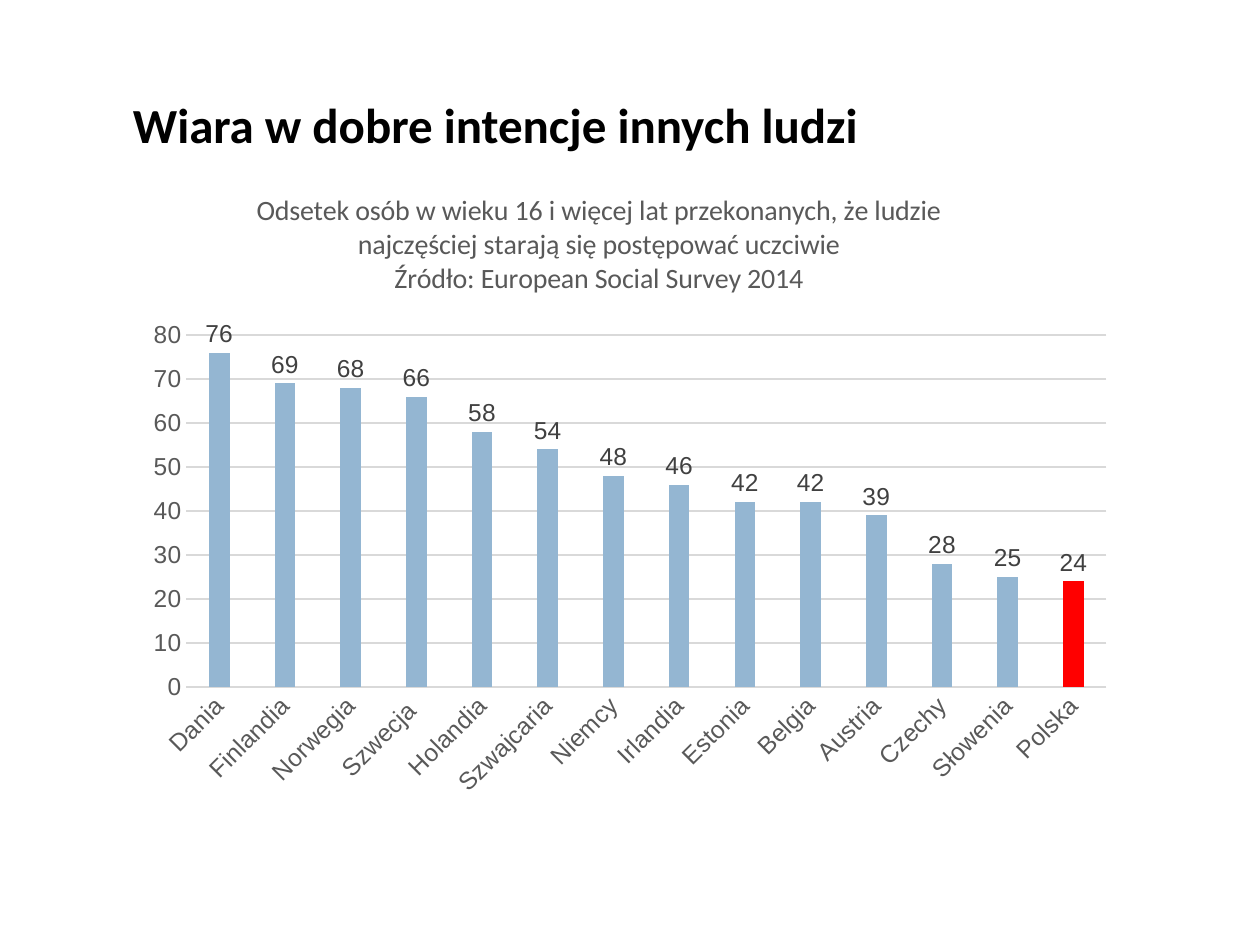
from pptx import Presentation
from pptx.chart.data import CategoryChartData
from pptx.dml.color import RGBColor
from pptx.enum.chart import XL_CHART_TYPE, XL_LABEL_POSITION, XL_TICK_MARK
from pptx.enum.text import MSO_ANCHOR, PP_ALIGN
from pptx.oxml.ns import qn
from pptx.util import Pt
from lxml import etree

COLUMN = XL_CHART_TYPE.COLUMN_CLUSTERED
OUTSIDE = XL_LABEL_POSITION.OUTSIDE_END
NO_TICK = XL_TICK_MARK.NONE
CENTER = PP_ALIGN.CENTER
MIDDLE = MSO_ANCHOR.MIDDLE

BLACK = RGBColor(0x00, 0x00, 0x00)
DARK = RGBColor(0x40, 0x40, 0x40)
GRAY = RGBColor(0x59, 0x59, 0x59)
PALE = RGBColor(0xD9, 0xD9, 0xD9)
BLUE = RGBColor(0x94, 0xB6, 0xD2)
RED = RGBColor(0xFF, 0x00, 0x00)

SHARES = {
    "Dania": 76, "Finlandia": 69, "Norwegia": 68, "Szwecja ": 66,
    "Holandia": 58, "Szwajcaria": 54, "Niemcy": 48, "Irlandia": 46,
    "Estonia": 42, "Belgia": 42, "Austria": 39, "Czechy": 28,
    "Słowenia": 25, "Polska": 24,
}
CAPTION = (
    "Odsetek osób w wieku 16 i więcej lat przekonanych, że ludzie "
    "najczęściej starają się postępować uczciwie\n"
    "Źródło: European Social Survey 2014"
)


class Deck:
    head_font = "Calibri"
    body_font = "Arial"

    def __init__(self, slide):
        self.slide = slide

    def style(self, font, name, size, color, bold=False):
        font.name, font.size, font.bold = name, Pt(size), bold
        font.color.rgb = color

    def place(self, parent, index, **spots):
        """Give a chart part a fixed place, in fractions of the chart."""
        for old in parent.findall(qn("c:layout")):
            parent.remove(old)
        layout = etree.Element(qn("c:layout"))
        manual = etree.SubElement(layout, qn("c:manualLayout"))
        for tag, value in spots.items():
            etree.SubElement(manual, qn("c:" + tag)).set("val", str(value))
        parent.insert(index, layout)

    def heading(self, text, left, top, width, height):
        box = self.slide.shapes.add_textbox(
            Pt(left), Pt(top), Pt(width), Pt(height))
        frame = box.text_frame
        frame.word_wrap = False
        frame.vertical_anchor = MIDDLE
        frame.text = text
        para = frame.paragraphs[0]
        para.alignment = CENTER
        self.style(para.runs[0].font, self.head_font, 28, BLACK, True)

    def caption(self, chart, text):
        chart.has_title = True
        title = chart.chart_title
        title.include_in_layout = False
        title.text_frame.text = text
        for para in title.text_frame.paragraphs:
            para.alignment = CENTER
            self.style(para.runs[0].font, self.head_font, 16, GRAY)
        self.place(title._element, 1, xMode="edge", yMode="edge",
                   x=0.12, y=0.02)

    def axis(self, axis):
        axis.major_tick_mark = axis.minor_tick_mark = NO_TICK
        self.style(axis.tick_labels.font, self.body_font, 14, GRAY)

    def rule(self, line):
        line.color.rgb = PALE
        line.width = Pt(0.75)

    def columns(self, shares, marked, left, top, width, height):
        data = CategoryChartData()
        data.categories = list(shares)
        data.add_series("Series 1", list(shares.values()))
        chart = self.slide.shapes.add_chart(
            COLUMN, Pt(left), Pt(top), Pt(width), Pt(height), data).chart
        chart.has_legend = False
        self.style(chart.font, self.body_font, 10, BLACK)

        # Axes and grid
        cats, vals = chart.category_axis, chart.value_axis
        self.axis(cats)
        self.axis(vals)
        self.rule(cats.format.line)
        cats.tick_labels.font._element.getroottree()
        body = cats._element.find(qn("c:txPr")).find(qn("a:bodyPr"))
        body.set("rot", "-2700000")
        vals.minimum_scale, vals.maximum_scale = 0, 80
        vals.major_unit = 10
        vals.format.line.fill.background()
        self.rule(vals.major_gridlines.format.line)

        # Columns and labels
        plot = chart.plots[0]
        plot.gap_width, plot.overlap = 219, -27
        plot.vary_by_categories = False
        series = plot.series[0]
        series.format.fill.solid()
        series.format.fill.fore_color.rgb = BLUE
        fill = series.points[list(shares).index(marked)].format.fill
        fill.solid()
        fill.fore_color.rgb = RED
        labels = series.data_labels
        labels.show_value = True
        labels.position = OUTSIDE
        self.style(labels.font, self.body_font, 14, DARK)

        area = chart._chartSpace.chart.plotArea
        self.place(area, 0, layoutTarget="inner", xMode="edge", yMode="edge",
                   x=0.053, y=0.252, w=0.928, h=0.554)
        return chart


def main():
    prs = Presentation()
    prs.slide_width, prs.slide_height = Pt(720), Pt(540)
    deck = Deck(prs.slides.add_slide(prs.slide_layouts[6]))

    # Heading
    deck.heading("Wiara w dobre intencje innych ludzi", 66, 50.5, 434, 41)

    # Chart
    chart = deck.columns(SHARES, "Polska", 76.5, 100, 566.5, 363)
    deck.caption(chart, CAPTION)

    prs.save("out.pptx")


if __name__ == "__main__":
    main()
